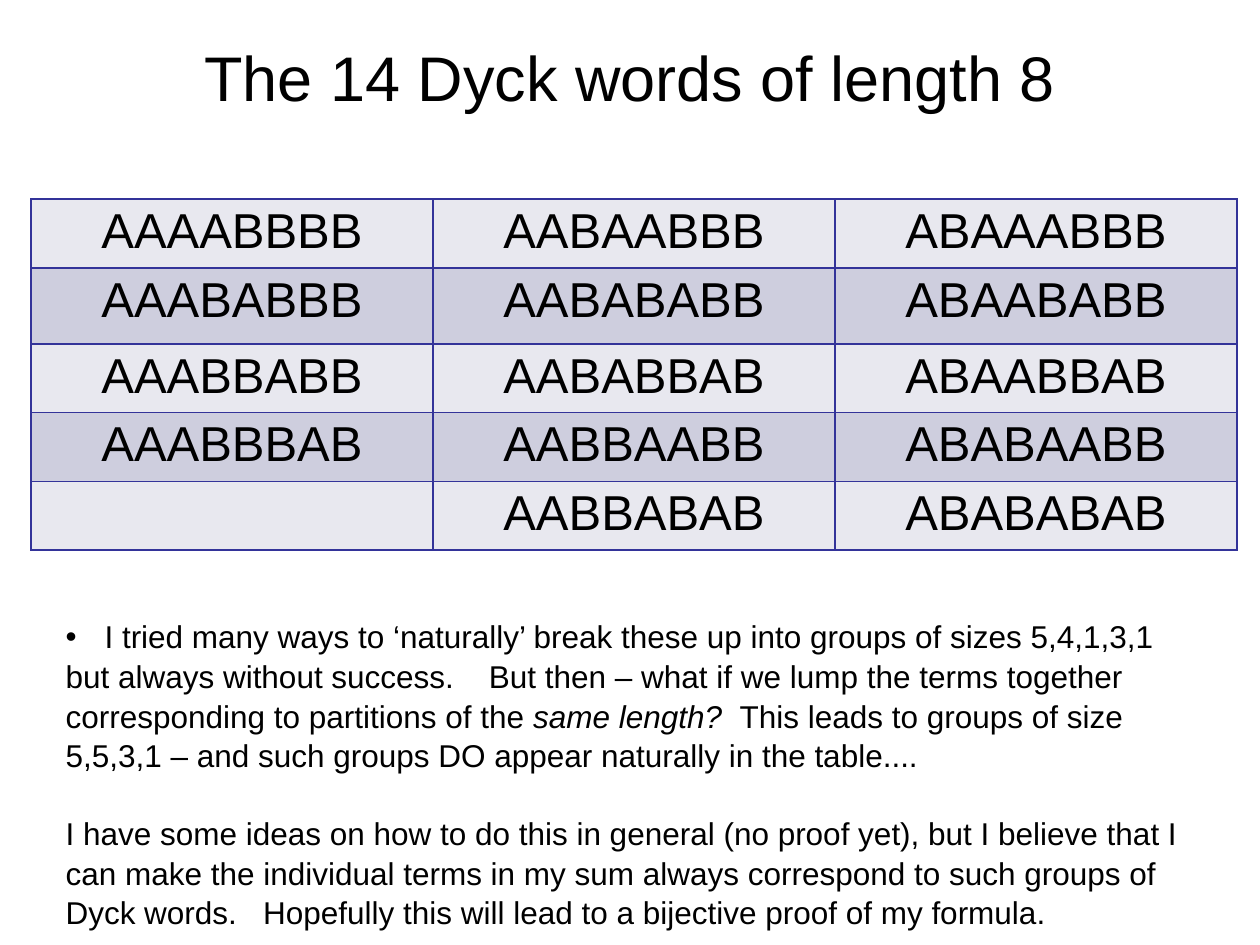
from dataclasses import dataclass

import pptx
import pptx.dml.color
import pptx.enum.text
import pptx.oxml.ns
import pptx.oxml.xmlchemy
import pptx.util
from lxml import etree

EMU_PER_PX = 914400 / 126
FONT = "Arial"
BLACK = pptx.dml.color.RGBColor(0x00, 0x00, 0x00)
BORDER = pptx.dml.color.RGBColor(0x33, 0x33, 0x99)
BANDS = (
    pptx.dml.color.RGBColor(0xE8, 0xE8, 0xEF),
    pptx.dml.color.RGBColor(0xCE, 0xCE, 0xDE),
)
CENTER = pptx.enum.text.PP_ALIGN.CENTER
LEFT = pptx.enum.text.PP_ALIGN.LEFT


@dataclass(frozen=True)
class Box:
    left: int
    top: int
    width: int
    height: int


@dataclass(frozen=True)
class BodyParagraph:
    """Text pieces alternate between upright and italic."""
    pieces: tuple[str, ...]
    bullet: bool = False
    space_before: float = 0


TITLE_BOX = Box(63, 32, 1134, 88)
TABLE_BOX = Box(31, 199, 1206, 344)
BODY_BOX = Box(53, 609, 1176, 318)
ROW_HEIGHTS = (67, 76, 67, 67, 67)
CELL_MARGIN = 5
BULLET_INDENT = 39

DYCK_WORDS = (
    ("AAAABBBB", "AABAABBB", "ABAAABBB"),
    ("AAABABBB", "AABABABB", "ABAABABB"),
    ("AAABBABB", "AABABBAB", "ABAABBAB"),
    ("AAABBBAB", "AABBAABB", "ABABAABB"),
    ("", "AABBABAB", "ABABABAB"),
)
BODY = (
    BodyParagraph(
        ("I tried many ways to ‘naturally’ break these up into groups of sizes 5,4,1,3,1",),
        bullet=True,
    ),
    BodyParagraph((
        "but always without success.    But then – what if we lump the terms "
        "together corresponding to partitions of the ",
        "same length?  ",
        "This leads to groups of size",
    )),
    BodyParagraph(("5,5,3,1 – and such groups DO appear naturally in the table....",)),
    BodyParagraph(
        ("I have some ideas on how to do this in general (no proof yet), but I believe "
         "that I can make the individual terms in my sum always correspond to such "
         "groups of Dyck words.   Hopefully this will lead to a bijective proof of my "
         "formula.",),
        space_before=21.7,
    ),
)


def px(length: int) -> pptx.util.Emu:
    return pptx.util.Emu(round(length * EMU_PER_PX))


def place(shape, box: Box) -> None:
    shape.left, shape.top = px(box.left), px(box.top)
    shape.width, shape.height = px(box.width), px(box.height)


def format_paragraph(paragraph, size: int, alignment) -> None:
    paragraph.alignment = alignment
    for run in paragraph.runs:
        run.font.name = FONT
        run.font.size = pptx.util.Pt(size)
        run.font.color.rgb = BLACK


def add_borders(cell) -> None:
    """Outline a cell; must run before the cell is filled."""
    properties = cell._tc.get_or_add_tcPr()
    for side in ("a:lnL", "a:lnR", "a:lnT", "a:lnB"):
        line = etree.SubElement(
            properties, pptx.oxml.ns.qn(side), w=str(pptx.util.Pt(1)))
        fill = etree.SubElement(line, pptx.oxml.ns.qn("a:solidFill"))
        etree.SubElement(fill, pptx.oxml.ns.qn("a:srgbClr"), val=str(BORDER))


def add_title(slide) -> None:
    title = slide.shapes.title
    place(title, TITLE_BOX)
    title.text_frame.text = "The 14 Dyck words of length 8"
    title.text_frame.vertical_anchor = pptx.enum.text.MSO_ANCHOR.MIDDLE
    format_paragraph(title.text_frame.paragraphs[0], 36, CENTER)


def add_word_table(slide) -> None:
    table = slide.shapes.add_table(
        len(DYCK_WORDS), len(DYCK_WORDS[0]),
        px(TABLE_BOX.left), px(TABLE_BOX.top),
        px(TABLE_BOX.width), px(TABLE_BOX.height),
    ).table
    table.first_row = False
    table.horz_banding = False
    for row_index, (words, height) in enumerate(zip(DYCK_WORDS, ROW_HEIGHTS)):
        table.rows[row_index].height = px(height)
        for column_index, word in enumerate(words):
            cell = table.cell(row_index, column_index)
            cell.margin_top = cell.margin_bottom = px(CELL_MARGIN)
            add_borders(cell)
            cell.fill.solid()
            cell.fill.fore_color.rgb = BANDS[row_index % len(BANDS)]
            cell.text_frame.text = word
            format_paragraph(cell.text_frame.paragraphs[0], 28, CENTER)


def add_body(slide) -> None:
    body = slide.placeholders[1]
    place(body, BODY_BOX)
    frame = body.text_frame
    frame.word_wrap = True
    frame.auto_size = pptx.enum.text.MSO_AUTO_SIZE.SHAPE_TO_FIT_TEXT
    for index, content in enumerate(BODY):
        paragraph = frame.add_paragraph() if index else frame.paragraphs[0]
        for piece_index, piece in enumerate(content.pieces):
            run = paragraph.add_run()
            run.text = piece
            run.font.italic = piece_index % 2 == 1
        format_paragraph(paragraph, 18, LEFT)
        paragraph.line_spacing = 1.05
        paragraph.space_before = pptx.util.Pt(content.space_before)
        paragraph.space_after = pptx.util.Pt(0)
        indent = px(BULLET_INDENT) if content.bullet else 0
        properties = paragraph._p.get_or_add_pPr()
        properties.set("marL", str(indent))
        properties.set("indent", str(-indent))
        if content.bullet:
            etree.SubElement(properties, pptx.oxml.ns.qn("a:buChar"), char="•")
        else:
            etree.SubElement(properties, pptx.oxml.ns.qn("a:buNone"))


def main() -> None:
    presentation = pptx.Presentation()
    presentation.slide_width = px(1260)
    presentation.slide_height = px(945)
    slide = presentation.slides.add_slide(presentation.slide_layouts[1])
    add_title(slide)
    add_word_table(slide)
    add_body(slide)
    presentation.save("out.pptx")


if __name__ == "__main__":
    main()
